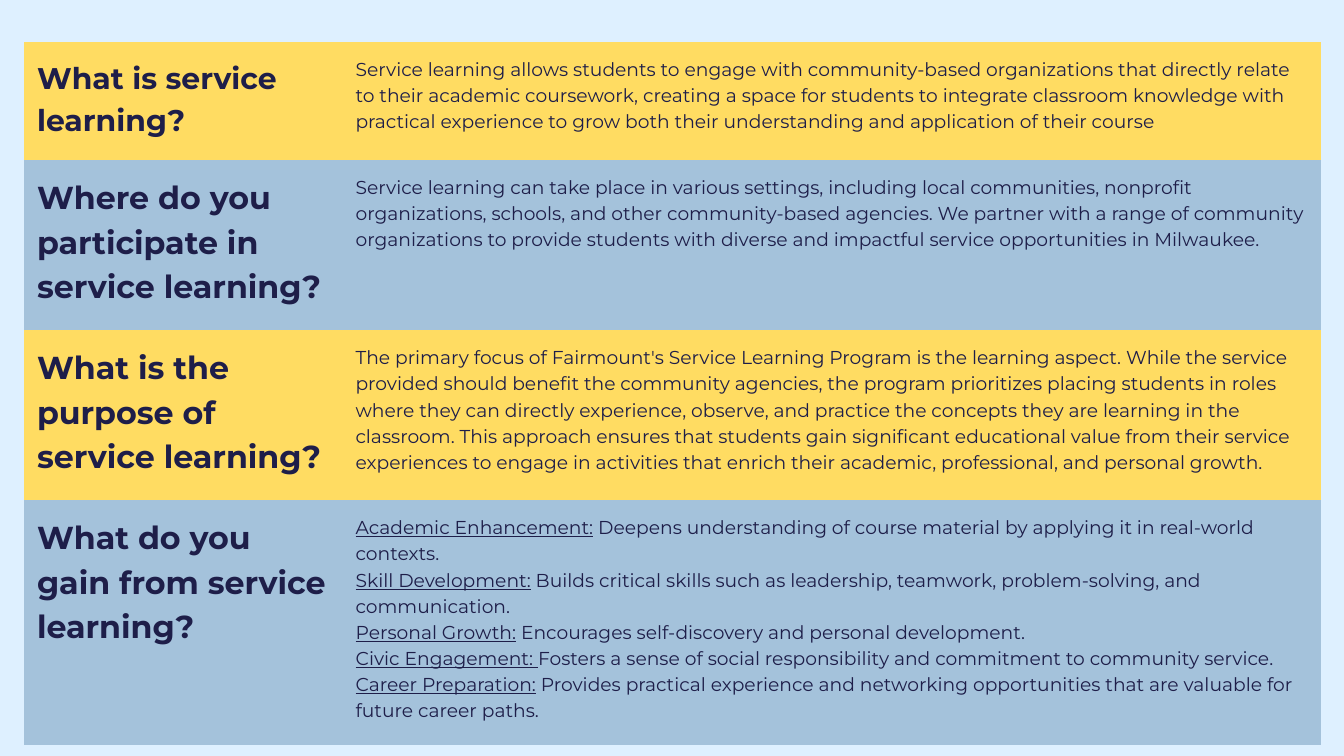
from lxml import etree
from pptx import Presentation
from pptx.dml.color import RGBColor
from pptx.enum.text import MSO_ANCHOR
from pptx.oxml.ns import qn
from pptx.util import Cm, Pt

TOP = MSO_ANCHOR.TOP
PALE_BLUE = RGBColor(0xDE, 0xF0, 0xFF)
YELLOW = RGBColor(0xFF, 0xDC, 0x62)
BLUE = RGBColor(0xA4, 0xC2, 0xDB)
NAVY = RGBColor(0x1E, 0x1E, 0x49)
FONT = "Montserrat"
LINE_RATIO = 1.4
COLUMN_WIDTHS = [12.04, 37.01]
ROW_HEIGHTS = [4.47, 6.43, 6.43, 9.27]
CELL_MARGIN = Cm(0.51)

# Each answer is a list of paragraphs: (underlined lead, text)
QUESTIONS = [
    ("What is service learning?", 32, [
        ("", "Service learning allows students to engage with community-based organizations "
             "that directly relate to their academic coursework, creating a space for students "
             "to integrate classroom knowledge with practical experience to grow both their "
             "understanding and application of their course"),
    ]),
    ("Where do you participate in service learning?", 34, [
        ("", "Service learning can take place in various settings, including local communities, "
             "nonprofit organizations, schools, and other community-based agencies. We partner "
             "with a range of community organizations to provide students with diverse and "
             "impactful service opportunities in Milwaukee."),
    ]),
    ("What is the purpose of service learning?", 34, [
        ("", "The primary focus of Fairmount's Service Learning Program is the learning aspect. "
             "While the service provided should benefit the community agencies, the program "
             "prioritizes placing students in roles where they can directly experience, observe, "
             "and practice the concepts they are learning in the classroom. This approach ensures "
             "that students gain significant educational value from their service experiences to "
             "engage in activities that enrich their academic, professional, and personal growth."),
    ]),
    ("What do you gain from service learning?", 34, [
        ("Academic Enhancement:", " Deepens understanding of course material by applying it "
                                  "in real-world contexts."),
        ("Skill Development:", " Builds critical skills such as leadership, teamwork, "
                               "problem-solving, and communication."),
        ("Personal Growth:", " Encourages self-discovery and personal development."),
        ("Civic Engagement: ", "Fosters a sense of social responsibility and commitment to "
                               "community service."),
        ("Career Preparation:", " Provides practical experience and networking opportunities "
                                "that are valuable for future career paths."),
    ]),
]


def add_text(paragraph, text, size=20, bold=False, underline=False):
    paragraph.line_spacing = Pt(size * LINE_RATIO)
    run = paragraph.add_run()
    run.text = text
    run.font.name = FONT
    run.font.size = Pt(size)
    run.font.bold = bold
    run.font.underline = underline
    run.font.color.rgb = NAVY


def format_cell(cell, color):
    cell.margin_left = cell.margin_right = CELL_MARGIN
    cell.margin_top = cell.margin_bottom = CELL_MARGIN
    cell.vertical_anchor = TOP
    # Invisible borders come before the fill in the cell properties
    properties = cell._tc.get_or_add_tcPr()
    for side in ("lnL", "lnR", "lnT", "lnB"):
        border = etree.SubElement(properties, qn(f"a:{side}"), w="0")
        etree.SubElement(border, qn("a:noFill"))
    cell.fill.solid()
    cell.fill.fore_color.rgb = color


# Slide and background
presentation = Presentation()
presentation.slide_width = Cm(50.8)
presentation.slide_height = Cm(28.58)
slide = presentation.slides.add_slide(presentation.slide_layouts[6])
slide.background.fill.solid()
slide.background.fill.fore_color.rgb = PALE_BLUE

# Table grid
table = slide.shapes.add_table(
    len(ROW_HEIGHTS), len(COLUMN_WIDTHS), Cm(0.89), Cm(1.57),
    Cm(sum(COLUMN_WIDTHS)), Cm(sum(ROW_HEIGHTS))).table
table.first_row = False
table.horz_banding = False
for column, width in zip(table.columns, COLUMN_WIDTHS):
    column.width = Cm(width)
for row, height in zip(table.rows, ROW_HEIGHTS):
    row.height = Cm(height)

# Questions on the left, answers on the right
for index, (question, size, answer) in enumerate(QUESTIONS):
    question_cell, answer_cell = table.rows[index].cells
    for cell in (question_cell, answer_cell):
        format_cell(cell, BLUE if index % 2 else YELLOW)
    add_text(question_cell.text_frame.paragraphs[0], question, size=size, bold=True)

    frame = answer_cell.text_frame
    for number, (lead, text) in enumerate(answer):
        paragraph = frame.add_paragraph() if number else frame.paragraphs[0]
        if lead:
            add_text(paragraph, lead, underline=True)
        add_text(paragraph, text)

presentation.save("out.pptx")
